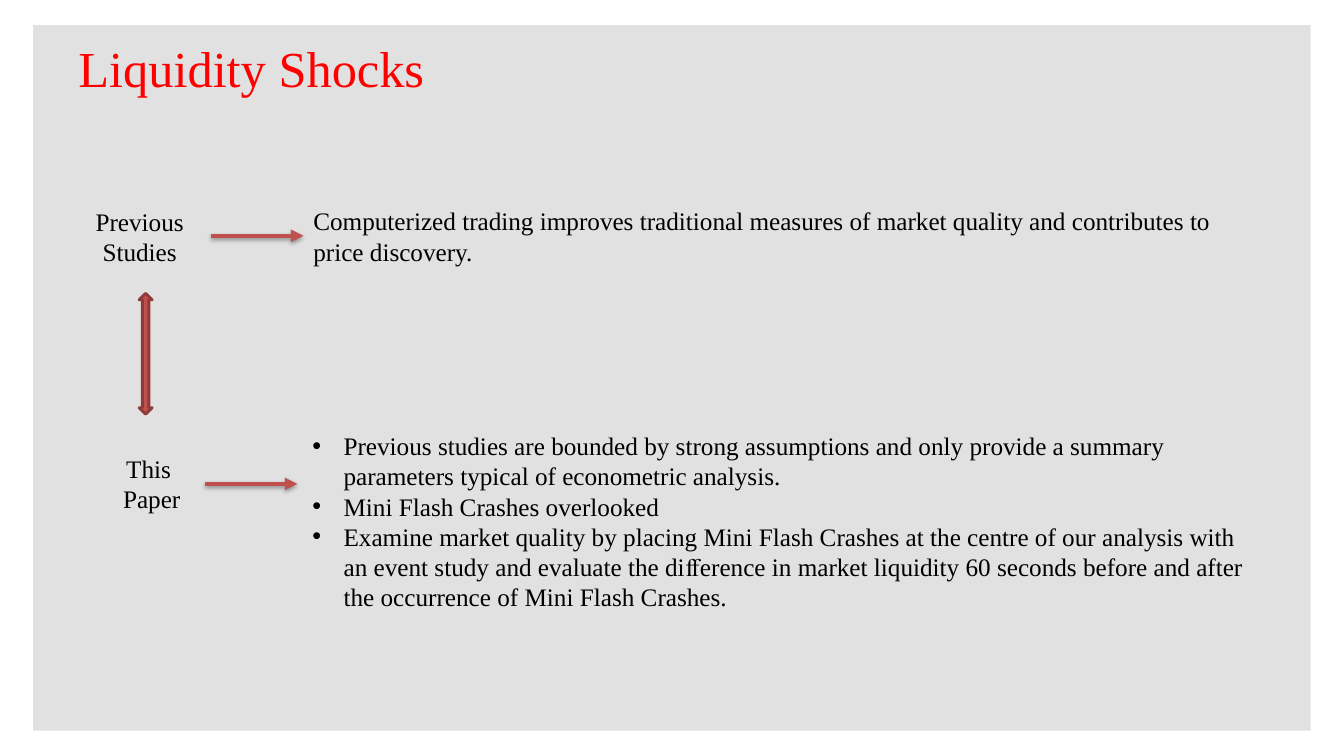
import pptx
import pptx.dml.color
import pptx.enum.shapes
import pptx.enum.text
import pptx.oxml
import pptx.oxml.ns
import pptx.util
from pptx.util import Inches

RGBColor = pptx.dml.color.RGBColor
PANEL_GREY = RGBColor(0xE1, 0xE1, 0xE1)
TITLE_RED = RGBColor(0xFF, 0x00, 0x00)
TEXT_BLACK = RGBColor(0x00, 0x00, 0x00)
ARROW_RED = RGBColor(0xC0, 0x50, 0x4D)
ARROW_EDGE = RGBColor(0x8E, 0x3B, 0x39)

SHAPES = pptx.enum.shapes.MSO_SHAPE
CENTER = pptx.enum.text.PP_ALIGN.CENTER
LEFT = pptx.enum.text.PP_ALIGN.LEFT
TOP = pptx.enum.text.MSO_ANCHOR.TOP
MIDDLE = pptx.enum.text.MSO_ANCHOR.MIDDLE
NAMESPACE = pptx.oxml.ns.nsdecls("a")


def add_bullet(para, indent):
    """Give a paragraph a round bullet with a hanging indent."""
    properties = para._p.get_or_add_pPr()
    properties.set("marL", str(indent))
    properties.set("indent", str(-indent))
    for tag in ('buFont typeface="Arial"', 'buChar char="•"'):
        properties.append(pptx.oxml.parse_xml(f"<a:{tag} {NAMESPACE}/>"))


def write(frame, text, size=18, color=TEXT_BLACK, font="Times New Roman",
          align=LEFT, bullet_indent=None):
    """Fill a text frame with one paragraph per line of text."""
    for index, line in enumerate(text.split("\n")):
        para = frame.paragraphs[0] if index == 0 else frame.add_paragraph()
        if bullet_indent:
            add_bullet(para, bullet_indent)
        para.alignment = align
        span = para.add_run()
        span.text = line
        span.font.name = font
        span.font.size = pptx.util.Pt(size)
        span.font.color.rgb = color


class Board:
    """Hold the style and the current slide."""

    def __init__(self, page):
        self.page = page

    def shape(self, kind, left, top, width, height, fill, edge=None):
        """Draw a filled preset shape."""
        shape = self.page.shapes.add_shape(
            kind, Inches(left), Inches(top), Inches(width), Inches(height))
        shape.shadow.inherit = False
        shape.fill.solid()
        shape.fill.fore_color.rgb = fill
        if edge is None:
            shape.line.fill.background()
        else:
            shape.line.color.rgb = edge
            shape.line.width = pptx.util.Pt(2)

    def text(self, text, left, top, width, height, anchor=TOP, **style):
        """Place a wrapping text box."""
        box = self.page.shapes.add_textbox(
            Inches(left), Inches(top), Inches(width), Inches(height))
        frame = box.text_frame
        frame.word_wrap = True
        frame.vertical_anchor = anchor
        write(frame, text, **style)

    def arrow(self, left, top, length=0.92):
        """Draw a rightward arrow with a soft shadow below."""
        line = self.page.shapes.add_connector(
            pptx.enum.shapes.MSO_CONNECTOR.STRAIGHT,
            Inches(left), Inches(top), Inches(left + length), Inches(top))
        line.line.color.rgb = ARROW_RED
        line.line.width = pptx.util.Pt(3)
        line.line._get_or_add_ln().append(
            pptx.oxml.parse_xml(f'<a:tailEnd {NAMESPACE} type="triangle"/>'))
        blur, distance = pptx.util.Pt(3.1), pptx.util.Pt(1.8)
        line._element.spPr.append(pptx.oxml.parse_xml(
            f'<a:effectLst {NAMESPACE}><a:outerShdw blurRad="{blur}" '
            f'dist="{distance}" dir="5400000" rotWithShape="0">'
            f'<a:srgbClr val="{TEXT_BLACK}"><a:alpha val="35000"/></a:srgbClr>'
            '</a:outerShdw></a:effectLst>'))


def main():
    """Build and save the slide."""
    deck = pptx.Presentation()
    deck.slide_width, deck.slide_height = Inches(13.33), Inches(7.5)
    board = Board(deck.slides.add_slide(deck.slide_layouts[6]))

    board.shape(SHAPES.RECTANGLE, 0.33, 0.25, 12.67, 7, PANEL_GREY)
    board.text("Liquidity Shocks", 0.68, 0.32, 10.55, 1.07,
               size=36, color=TITLE_RED)

    board.text("Previous Studies", 0.68, 1.86, 1.41, 0.97,
               anchor=MIDDLE, align=CENTER)
    board.text("Computerized trading improves traditional measures of market "
               "quality and contributes to price discovery.",
               3.01, 1.99, 9.5, 0.71)
    board.arrow(2.09, 2.34)

    board.shape(SHAPES.UP_DOWN_ARROW, 1.38, 2.91, 0.13, 1.2,
                ARROW_RED, ARROW_EDGE)

    board.text("This \nPaper", 0.75, 4.45, 1.51, 0.71, align=CENTER)
    board.text("Previous studies are bounded by strong assumptions and only "
               "provide a summary parameters typical of econometric analysis.\n"
               "Mini Flash Crashes overlooked\n"
               "Examine market quality by placing Mini Flash Crashes at the "
               "centre of our analysis with an event study and evaluate the "
               "diﬀerence in market liquidity 60 seconds before and after the "
               "occurrence of Mini Flash Crashes.",
               3, 4.22, 9.5, 2.22, bullet_indent=Inches(0.31))
    board.arrow(2.03, 4.8)

    deck.save("out.pptx")


if __name__ == "__main__":
    main()
